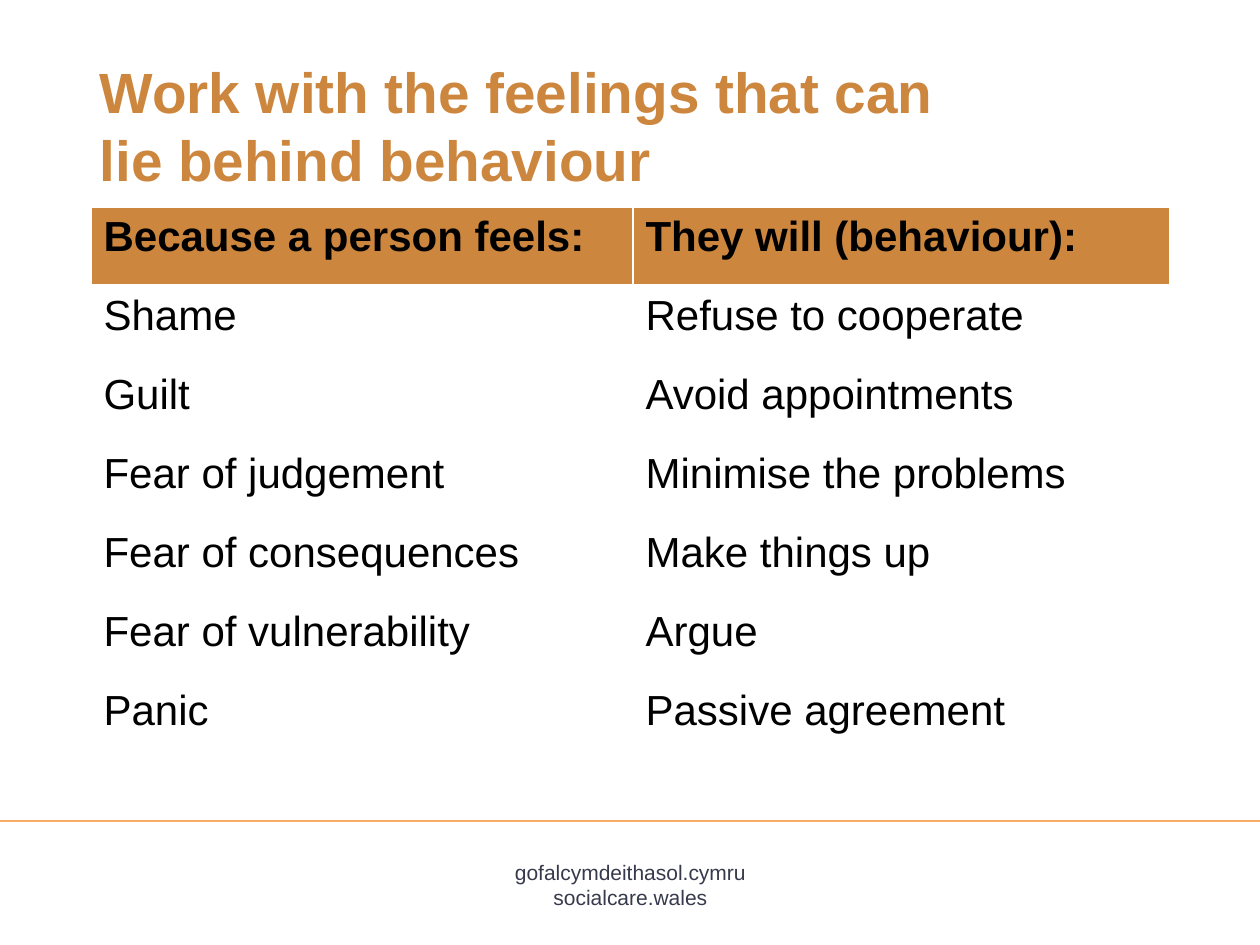
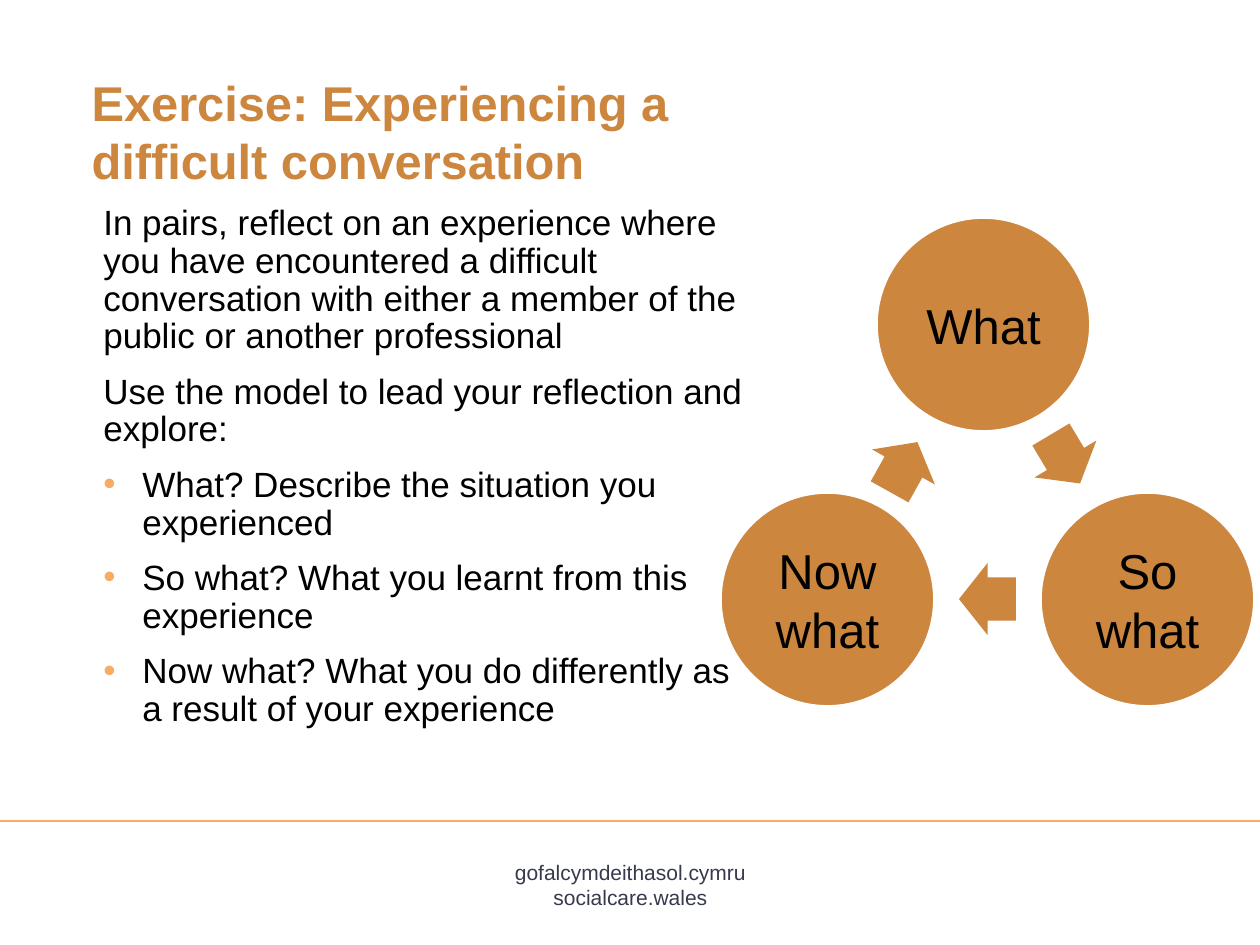
from dataclasses import dataclass

from lxml import etree
from pptx import Presentation
from pptx import util as u
from pptx.dml.color import RGBColor
from pptx.enum import shapes, text
from pptx.oxml import ns

PX = 914400 / 126
FONT = "Arial"
COLORS = {
    "ochre": "CC863E",
    "rule": "F7AB64",
    "footer": "37394C",
    "ink": "000000",
    "paper": "FFFFFF",
}


@dataclass(frozen=True)
class Box:
    left: int
    top: int
    width: int
    height: int

    def emu(self) -> list[int]:
        return [px(n) for n in (self.left, self.top, self.width, self.height)]


@dataclass(frozen=True)
class Step:
    label: str
    left: int
    top: int


@dataclass(frozen=True)
class Arrow:
    center_x: int
    center_y: int
    rotation: float


FEELINGS = [
    ("Because a person feels:", "They will (behaviour):"),
    ("Shame", "Refuse to cooperate"),
    ("Guilt", "Avoid appointments"),
    ("Fear of judgement", "Minimise the problems"),
    ("Fear of consequences", "Make things up"),
    ("Fear of vulnerability", "Argue"),
    ("Panic", "Passive agreement"),
]
INSTRUCTIONS = [
    "In pairs, reflect on an experience where you have encountered a difficult "
    "conversation with either a member of the public or another professional",
    "Use the model to lead your reflection and explore:",
    "What? Describe the situation you experienced",
    "So what? What you learnt from this experience",
    "Now what? What you do differently as a result of your experience",
]
STEPS = [Step("What", 877, 218), Step("Now what", 721, 493), Step("So what", 1041, 493)]
ARROWS = [Arrow(903, 467, 299.2), Arrow(1065, 459, 59.2), Arrow(987, 599, 180)]
STEP_SIZE = 213
ARROW_SIZE = (57, 72)


def px(length: float) -> int:
    return round(length * PX)


def rgb(name: str) -> RGBColor:
    return RGBColor.from_string(COLORS[name])


def add_xml(parent, tag: str, **attributes: str):
    return etree.SubElement(parent, ns.qn(tag), attributes)


def add_bullet(paragraph, indent: int = 39) -> None:
    props = paragraph._p.get_or_add_pPr()
    props.set("marL", str(px(indent)))
    props.set("indent", str(-px(indent)))
    add_xml(add_xml(props, "a:buClr"), "a:srgbClr", val=COLORS["rule"])
    add_xml(props, "a:buFont", typeface=FONT)
    add_xml(props, "a:buChar", char="•")


def write(frame, lines: list[str], *, size: float, color: str = "ink",
          bold: bool = False, align=text.PP_ALIGN.LEFT,
          anchor=text.MSO_ANCHOR.TOP, spacing: float | None = None,
          before: int = 0, bullets_from: int | None = None) -> None:
    frame.word_wrap = True
    frame.vertical_anchor = anchor
    for index, line in enumerate(lines):
        paragraph = frame.add_paragraph() if index else frame.paragraphs[0]
        paragraph.text = line
        if bullets_from is not None and index >= bullets_from:
            add_bullet(paragraph)
        paragraph.alignment = align
        paragraph.line_spacing = spacing
        paragraph.space_before = u.Pt(before if index else 0)
        for run in paragraph.runs:
            run.font.name = FONT
            run.font.size = u.Pt(size)
            run.font.bold = bold
            run.font.color.rgb = rgb(color)


# Shared slide frame: title, rule and footer
def add_slide(deck, heading: str, box: Box, size: float):
    slide = deck.slides.add_slide(deck.slide_layouts[5])
    title = slide.shapes.title
    title.left, title.top, title.width, title.height = box.emu()
    title.text_frame.auto_size = text.MSO_AUTO_SIZE.NONE
    write(title.text_frame, [heading], size=size, color="ochre", bold=True)

    rule = slide.shapes.add_connector(
        shapes.MSO_CONNECTOR.STRAIGHT, 0, px(821), deck.slide_width, px(821))
    rule.line.color.rgb = rgb("rule")
    rule.line.width = u.Pt(1)
    add_xml(rule._element.spPr, "a:effectLst")

    footer = slide.shapes.add_textbox(*Box(488, 853, 285, 58).emu())
    write(footer.text_frame, ["gofalcymdeithasol.cymru", "socialcare.wales"],
          size=12, color="footer", align=text.PP_ALIGN.CENTER)
    return slide


# Feelings and behaviour table
def add_borders(cell, bottom: int) -> None:
    props = cell._tc.get_or_add_tcPr()
    for side, width in {"L": 1, "R": 1, "T": 1, "B": bottom}.items():
        line = add_xml(props, f"a:ln{side}", w=str(u.Pt(width)))
        add_xml(add_xml(line, "a:solidFill"), "a:srgbClr", val=COLORS["paper"])


def add_feelings_table(slide) -> None:
    frame = slide.shapes.add_table(
        len(FEELINGS), 2, *Box(91, 207, 1079, 79 * len(FEELINGS)).emu())
    table = frame.table
    table.horz_banding = False
    for column, width in zip(table.columns, (542, 537)):
        column.width = px(width)
    for row_index, words in enumerate(FEELINGS):
        header = row_index == 0
        for column_index, word in enumerate(words):
            cell = table.cell(row_index, column_index)
            add_borders(cell, bottom=3 if header else 1)
            cell.fill.solid()
            cell.fill.fore_color.rgb = rgb("ochre" if header else "paper")
            write(cell.text_frame, [word], size=24, bold=header)


# Reflection cycle
def add_solid(slide, kind, box: Box):
    shape = slide.shapes.add_shape(kind, *box.emu())
    shape.shadow.inherit = False
    shape.fill.solid()
    shape.fill.fore_color.rgb = rgb("ochre")
    shape.line.fill.background()
    return shape


def add_step(slide, step: Step) -> None:
    circle = add_solid(slide, shapes.MSO_SHAPE.OVAL,
                       Box(step.left, step.top, STEP_SIZE, STEP_SIZE))
    circle.line.color.rgb = rgb("paper")
    circle.line.width = u.Pt(1)
    frame = circle.text_frame
    frame.margin_left = frame.margin_right = 0
    frame.margin_top = frame.margin_bottom = 0
    write(frame, [step.label], size=28, align=text.PP_ALIGN.CENTER,
          anchor=text.MSO_ANCHOR.MIDDLE)


def add_arrow(slide, arrow: Arrow) -> None:
    width, height = ARROW_SIZE
    pointer = add_solid(slide, shapes.MSO_SHAPE.RIGHT_ARROW,
                        Box(arrow.center_x - width // 2,
                            arrow.center_y - height // 2, width, height))
    pointer.adjustments[0] = 0.6
    pointer.adjustments[1] = 0.5
    pointer.rotation = arrow.rotation


def main() -> None:
    deck = Presentation()
    deck.slide_width, deck.slide_height = px(1260), px(945)

    feelings = add_slide(
        deck, "Work with the feelings that can\vlie behind behaviour",
        Box(87, 50, 942, 142), 32.4)
    add_feelings_table(feelings)

    exercise = add_slide(
        deck, "Exercise: Experiencing a\vdifficult conversation",
        Box(79, 66, 908, 142), 27.9)
    instructions = exercise.shapes.add_textbox(*Box(91, 199, 678, 599).emu())
    write(instructions.text_frame, INSTRUCTIONS, size=20, spacing=0.9,
          before=10, bullets_from=2)
    for step in STEPS:
        add_step(exercise, step)
    for arrow in ARROWS:
        add_arrow(exercise, arrow)

    deck.save("out.pptx")


if __name__ == "__main__":
    main()
